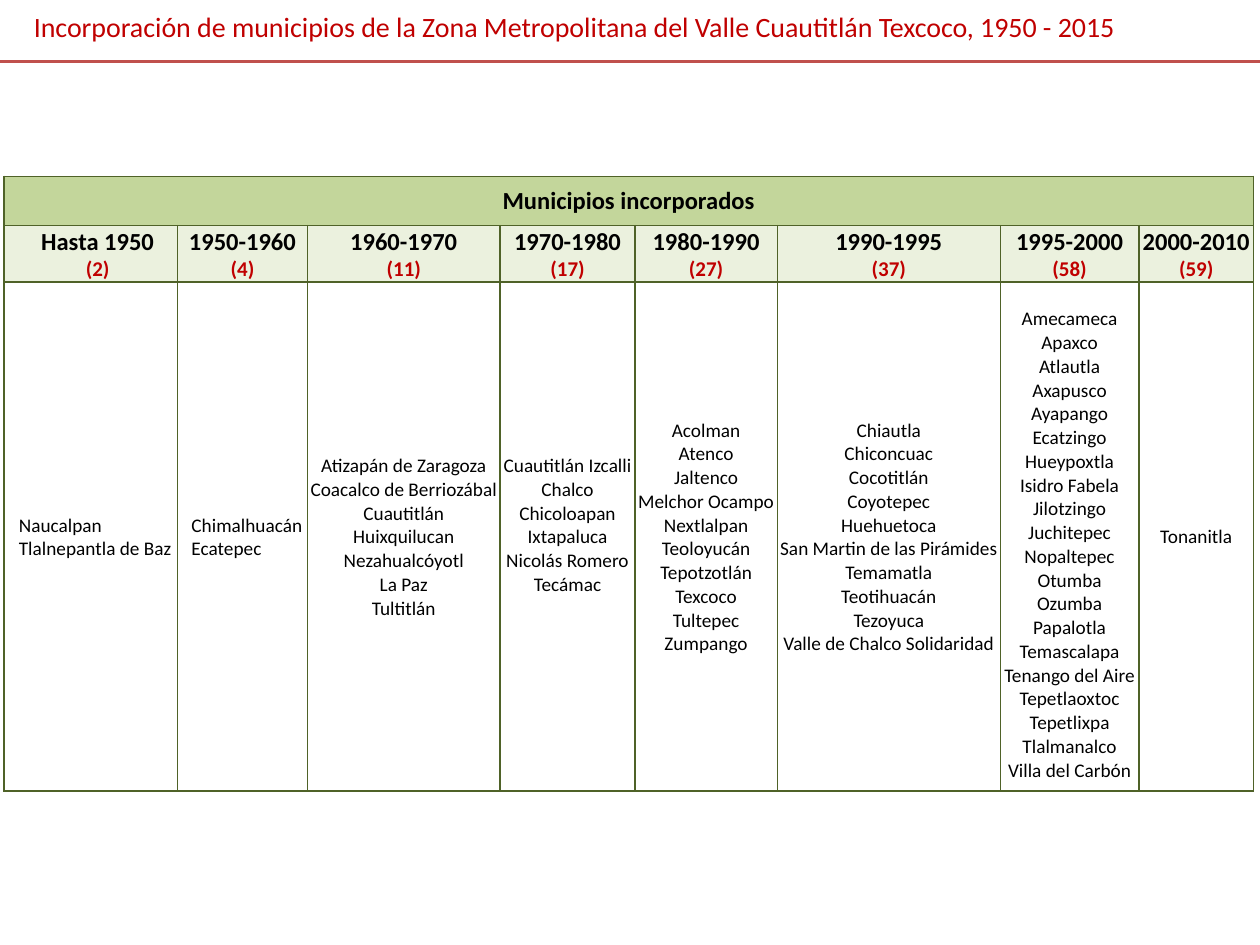
"""Build the slide listing municipalities added to the metropolitan area by period."""
import lxml.etree
import pptx
import pptx.dml.color
import pptx.enum.shapes
import pptx.enum.text
import pptx.oxml.ns
import pptx.util

Inches = pptx.util.Inches
Pt = pptx.util.Pt
ALIGN = pptx.enum.text.PP_ALIGN

TITLE = "Incorporación de municipios de la Zona Metropolitana del Valle Cuautitlán Texcoco, 1950 - 2015"
HEADING = "Municipios incorporados"
PERIODS = [
    {"name": "Hasta 1950", "total": "(2)", "width": 1.38, "head_left": 0.12, "left": 0.12,
     "align": ALIGN.LEFT, "towns": ["Naucalpan", "Tlalnepantla de Baz"]},
    {"name": "1950-1960", "total": "(4)", "width": 1.03, "left": 0.11,
     "align": ALIGN.LEFT, "towns": ["Chimalhuacán", "Ecatepec"]},
    {"name": "1960-1970", "total": "(11)", "width": 1.53, "towns": [
        "Atizapán de Zaragoza", "Coacalco de Berriozábal", "Cuautitlán", "Huixquilucan",
        "Nezahualcóyotl", "La Paz", "Tultitlán"]},
    {"name": "1970-1980", "total": "(17)", "width": 1.07, "bottom": 0.19, "towns": [
        "Cuautitlán Izcalli", "Chalco", "Chicoloapan", "Ixtapaluca", "Nicolás Romero", "Tecámac"]},
    {"name": "1980-1990", "total": "(27)", "width": 1.13, "towns": [
        "Acolman", "Atenco", "Jaltenco", "Melchor Ocampo", "Nextlalpan", "Teoloyucán",
        "Tepotzotlán", "Texcoco", "Tultepec", "Zumpango"]},
    {"name": "1990-1995", "total": "(37)", "width": 1.77, "towns": [
        "Chiautla", "Chiconcuac", "Cocotitlán", "Coyotepec", "Huehuetoca",
        "San Martin de las Pirámides", "Temamatla", "Teotihuacán", "Tezoyuca",
        "Valle de Chalco Solidaridad"]},
    {"name": "1995-2000", "total": "(58)", "width": 1.1, "top": 0.13, "towns": [
        "Amecameca", "Apaxco", "Atlautla", "Axapusco", "Ayapango", "Ecatzingo", "Hueypoxtla",
        "Isidro Fabela", "Jilotzingo", "Juchitepec", "Nopaltepec", "Otumba", "Ozumba",
        "Papalotla", "Temascalapa", "Tenango del Aire", "Tepetlaoxtoc", "Tepetlixpa",
        "Tlalmanalco", "Villa del Carbón"]},
    {"name": "2000-2010", "total": "(59)", "width": 0.91, "towns": ["Tonanitla"]},
]
ROW_HEIGHTS = [0.39, 0.45, 4.04]
COLORS = {"rule": "C0504D", "accent": "C00000", "text": "000000", "border": "4F6228",
          "heading": "C3D69B", "period": "EBF1DE", "body": "FFFFFF"}


def rgb(name):
    return pptx.dml.color.RGBColor.from_string(COLORS[name])


def write(frame, lines, align=ALIGN.CENTER):
    """Write (text, size, colour, bold) lines as paragraphs."""
    frame.text = "\n".join(line[0] for line in lines)
    for para, (_, size, color, bold) in zip(frame.paragraphs, lines):
        para.alignment = align
        for span in para.runs:
            span.font.name = "Calibri"
            span.font.size = Pt(size)
            span.font.bold = bold
            span.font.color.rgb = rgb(color)


def style_cell(cell, fill, left=0.01, top=0.01, bottom=0):
    """Set borders, fill, anchor and margins of a cell."""
    properties = cell._tc.get_or_add_tcPr()
    for side in ("lnL", "lnR", "lnT", "lnB"):
        line = lxml.etree.SubElement(properties, pptx.oxml.ns.qn("a:" + side), w=str(Pt(1)))
        solid = lxml.etree.SubElement(line, pptx.oxml.ns.qn("a:solidFill"))
        lxml.etree.SubElement(solid, pptx.oxml.ns.qn("a:srgbClr"), val=COLORS["border"])
    cell.fill.solid()
    cell.fill.fore_color.rgb = rgb(fill)
    cell.vertical_anchor = pptx.enum.text.MSO_ANCHOR.MIDDLE
    cell.margin_left, cell.margin_right = Inches(left), Inches(0.01)
    cell.margin_top, cell.margin_bottom = Inches(top), Inches(bottom)


def add_title(page):
    rule = page.shapes.add_connector(
        pptx.enum.shapes.MSO_CONNECTOR.STRAIGHT, 0, Inches(0.49), Inches(10), Inches(0.49))
    rule.line.color.rgb = rgb("rule")
    rule.line.width = Pt(1.5)
    lxml.etree.SubElement(rule._element.spPr, pptx.oxml.ns.qn("a:effectLst"))
    box = page.shapes.add_textbox(Inches(0.17), Inches(0.03), Inches(8.84), Inches(0.37))
    box.text_frame.word_wrap = False
    write(box.text_frame, [(TITLE, 16, "accent", False)], ALIGN.LEFT)


def add_periods(page):
    width = sum(period["width"] for period in PERIODS)
    table = page.shapes.add_table(
        len(ROW_HEIGHTS), len(PERIODS), Inches(0.03), Inches(1.4),
        Inches(width), Inches(sum(ROW_HEIGHTS))).table
    for row, height in zip(table.rows, ROW_HEIGHTS):
        row.height = Inches(height)
    for index, period in enumerate(PERIODS):
        table.columns[index].width = Inches(period["width"])
        heading, head, body = (table.cell(row, index) for row in range(3))
        style_cell(heading, "heading")
        style_cell(head, "period", period.get("head_left", 0.01))
        style_cell(body, "body", period.get("left", 0.01), period.get("top", 0.01),
                   period.get("bottom", 0))
        write(head.text_frame, [(period["name"], 14, "text", True),
                                (period["total"], 12, "accent", True)])
        write(body.text_frame, [(town, 11, "text", False) for town in period["towns"]],
              period.get("align", ALIGN.CENTER))
    table.cell(0, 0).merge(table.cell(0, len(PERIODS) - 1))
    write(table.cell(0, 0).text_frame, [(HEADING, 14, "text", True)])


def main():
    deck = pptx.Presentation()
    deck.slide_width, deck.slide_height = Inches(10), Inches(7.5)
    page = deck.slides.add_slide(deck.slide_layouts[6])
    add_title(page)
    add_periods(page)
    deck.save("out.pptx")


if __name__ == "__main__":
    main()
